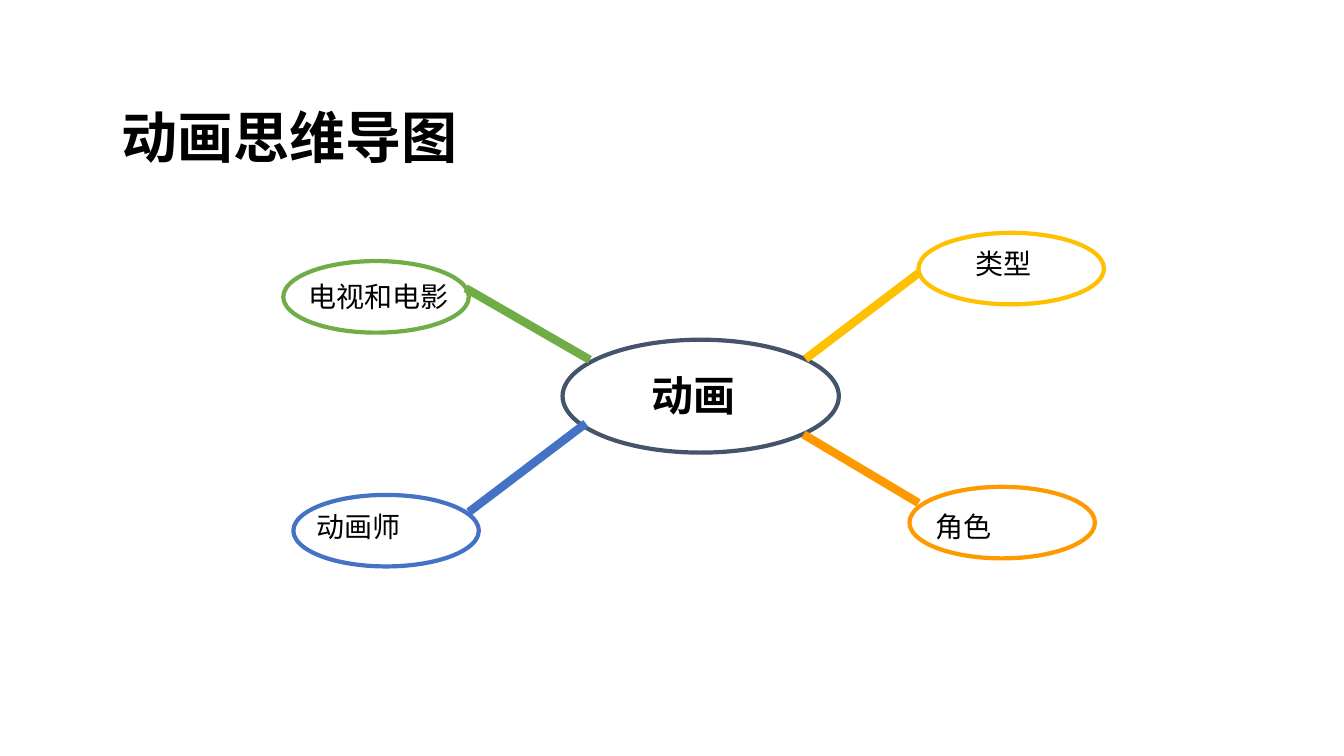
from lxml.etree import SubElement
from pptx import Presentation
from pptx.dml.color import RGBColor
from pptx.enum.shapes import MSO_CONNECTOR, MSO_SHAPE
from pptx.enum.text import MSO_ANCHOR, MSO_AUTO_SIZE, PP_ALIGN
from pptx.oxml.ns import qn
from pptx.util import Inches, Pt

TITLE = "动画思维导图"
FONT = "Arial"
HUB_SIZE, BRANCH_SIZE = (2.74, 1.12), (1.84, 0.71)
HUB = {"text": "动画", "color": "44546A", "oval": (5.58, 3.37), "label": (6.36, 3.57, 1.23)}
# label: left, top, width; link: from the hub, to the branch
BRANCHES = [
    {"text": "类型", "color": "FFC000", "oval": (9.11, 2.31),
     "label": (9.58, 2.35, 1.59), "link": (7.99, 3.56, 9.11, 2.71)},
    {"text": "角色", "color": "FF9900", "oval": (9.02, 4.83),
     "label": (9.18, 4.95, 1.59), "link": (7.97, 4.31, 9.11, 4.99)},
    {"text": "动画师", "color": "4472C4", "oval": (2.91, 4.91),
     "label": (3.04, 4.95, 1.59), "link": (5.81, 4.2, 4.65, 5.08)},
    {"text": "电视和电影", "color": "70AD47", "oval": (2.81, 2.59),
     "label": (2.96, 2.67, 1.7), "link": (5.85, 3.57, 4.62, 2.86)},
]


def rgb(color):
    return RGBColor.from_string(color)


def set_text(tf, text, size, bold=False):
    tf.text = text
    tf.word_wrap = True
    tf.auto_size = MSO_AUTO_SIZE.NONE
    p = tf.paragraphs[0]
    p.alignment = PP_ALIGN.LEFT
    p.line_spacing = 1.0
    font = p.runs[0].font
    font.name, font.size, font.bold = FONT, Pt(size), bold
    font.color.rgb = rgb("000000")


def add_oval(s, node, size):
    oval = s.shapes.add_shape(MSO_SHAPE.OVAL, *map(Inches, node["oval"] + size))
    oval.shadow.inherit = False
    oval.fill.background()
    oval.line.color.rgb = rgb(node["color"])
    oval.line.width = Pt(3)


def add_label(s, node, size, bold=False):
    left, top, width = node["label"]
    tf = s.shapes.add_textbox(*map(Inches, (left, top, width, 0.8))).text_frame
    tf.margin_left = tf.margin_right = tf.margin_top = tf.margin_bottom = Inches(0.1)
    set_text(tf, node["text"], size, bold)


def add_link(s, node):
    link = s.shapes.add_connector(MSO_CONNECTOR.STRAIGHT, *map(Inches, node["link"]))
    link.line.color.rgb = rgb(node["color"])
    link.line.width = Pt(6)
    SubElement(link._element.spPr, qn("a:effectLst"))


prs = Presentation()
prs.slide_width, prs.slide_height = Inches(13.33), Inches(7.5)
s = prs.slides.add_slide(prs.slide_layouts[5])

title = s.shapes.title
title.left, title.top, title.width, title.height = map(Inches, (1.11, 0.9, 11.68, 0.9))
set_text(title.text_frame, TITLE, 40, bold=True)
title.text_frame.vertical_anchor = MSO_ANCHOR.MIDDLE

add_oval(s, HUB, HUB_SIZE)
add_label(s, HUB, 30, bold=True)
for branch in BRANCHES:
    add_link(s, branch)
    add_oval(s, branch, BRANCH_SIZE)
    add_label(s, branch, 20)

prs.save("out.pptx")
